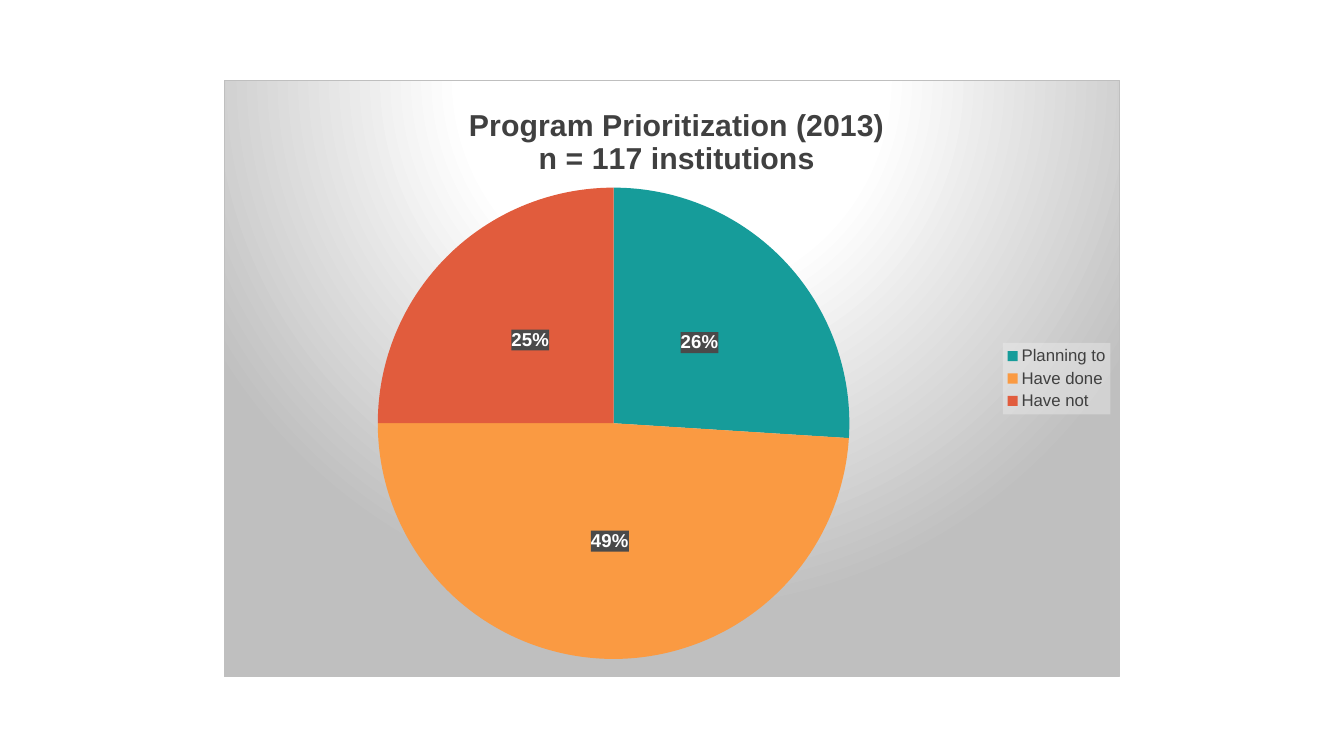
from dataclasses import dataclass

from lxml.etree import fromstring
from pptx import Presentation
from pptx.chart.data import CategoryChartData
from pptx.dml.color import RGBColor
from pptx.enum.chart import XL_CHART_TYPE, XL_LABEL_POSITION, XL_LEGEND_POSITION
from pptx.oxml.ns import nsdecls, qn
from pptx.util import Cm, Pt


@dataclass(frozen=True)
class Theme:
    font: str = "Arial"
    text: str = "404040"
    light: str = "FFFFFF"
    edge: str = "BFBFBF"
    panel: str = "F2F2F2"
    tag: str = "4A4A4A"
    slices: tuple = ("169C9A", "FA9A42", "E15C3D")
    title: float = 21.6
    label: float = 13.3
    legend: float = 12
    base: float = 10


def solid(color, alpha=100):
    return (f'<a:solidFill><a:srgbClr val="{color}">'
            f'<a:alpha val="{alpha * 1000}"/></a:srgbClr></a:solidFill>')


def glow(inner, outer):
    """Radial gradient centred above the top edge."""
    stops = "".join(
        f'<a:gs pos="{pos * 1000}"><a:srgbClr val="{color}"/></a:gs>'
        for pos, color in ((0, inner), (39, inner), (100, outer)))
    return (f'<a:gradFill><a:gsLst>{stops}</a:gsLst><a:path path="circle">'
            '<a:fillToRect l="50000" t="-80000" r="50000" b="180000"/>'
            '</a:path></a:gradFill>')


def paint(node, fill, line="<a:noFill/>"):
    """Give a chart part a fill and a border, ahead of its text style."""
    shape = fromstring(f'<c:spPr {nsdecls("c", "a")}>{fill}'
                       f'<a:ln w="9525">{line}</a:ln></c:spPr>')
    node.find(qn("c:txPr")).addprevious(shape)


def place(node, index, inner=False, **box):
    """Fix a chart part at fractions of the chart area."""
    for old in node.findall(qn("c:layout")):
        node.remove(old)
    target = '<c:layoutTarget val="inner"/>' if inner else ""
    modes = "".join(f'<c:{key}Mode val="edge"/>' for key in "xy")
    sizes = "".join(f'<c:{key} val="{val}"/>' for key, val in box.items())
    node.insert(index, fromstring(
        f'<c:layout {nsdecls("c")}><c:manualLayout>{target}{modes}{sizes}'
        '</c:manualLayout></c:layout>'))


class Deck:
    def __init__(self, theme):
        self.theme = theme
        self.prs = Presentation()
        self.prs.slide_width, self.prs.slide_height = Cm(33.87), Cm(19.05)
        self.slide = self.prs.slides.add_slide(self.prs.slide_layouts[6])

    def style(self, font, size, color, bold=False):
        font.name, font.size, font.bold = self.theme.font, Pt(size), bold
        font.color.rgb = RGBColor.from_string(color)

    def pie(self, box, names, values):
        look = self.theme
        data = CategoryChartData()
        data.categories = names
        data.add_series("Series 1", values)
        chart = self.slide.shapes.add_chart(
            XL_CHART_TYPE.PIE, *map(Cm, box), data).chart
        self.style(chart.font, look.base, "000000")
        paint(chart._chartSpace, glow(look.light, look.edge), solid(look.edge))

        # Slices
        plot = chart.plots[0]
        plot.vary_by_categories = True
        for i, color in enumerate(look.slices):
            fill = plot.series[0].points[i].format.fill
            fill.solid()
            fill.fore_color.rgb = RGBColor.from_string(color)
        area = chart._chartSpace.chart.plotArea
        place(area, 0, inner=True, x=0.17, y=0.18, w=0.53, h=0.79)

        # Percent labels
        labels = plot.series[0].data_labels
        labels.show_percentage, labels.show_value = True, False
        labels.number_format, labels.number_format_is_linked = "0%", False
        labels.position = XL_LABEL_POSITION.CENTER
        self.style(labels.font, look.label, look.light, bold=True)
        paint(labels._element, solid(look.tag))
        return chart

    def title(self, chart, text):
        frame = chart.chart_title.text_frame
        frame.text = text
        for para in frame.paragraphs:
            for run in para.runs:
                self.style(run.font, self.theme.title, self.theme.text, bold=True)
        place(chart.chart_title._element, 1, x=0.27, y=0.04)

    def legend(self, chart):
        chart.has_legend = True
        legend = chart.legend
        legend.position = XL_LEGEND_POSITION.RIGHT
        legend.include_in_layout = False
        self.style(legend.font, self.theme.legend, self.theme.text)
        paint(legend._element, solid(self.theme.panel, 39))
        place(legend._element, 1, x=0.87, y=0.44, w=0.12, h=0.12)


def main():
    deck = Deck(Theme())
    chart = deck.pie((5.64, 2.01, 22.58, 15.06),
                     ("Planning to", "Have done", "Have not"), (26, 49, 25))
    deck.title(chart, "Program Prioritization (2013)\nn = 117 institutions")
    deck.legend(chart)
    deck.prs.save("out.pptx")


if __name__ == "__main__":
    main()
